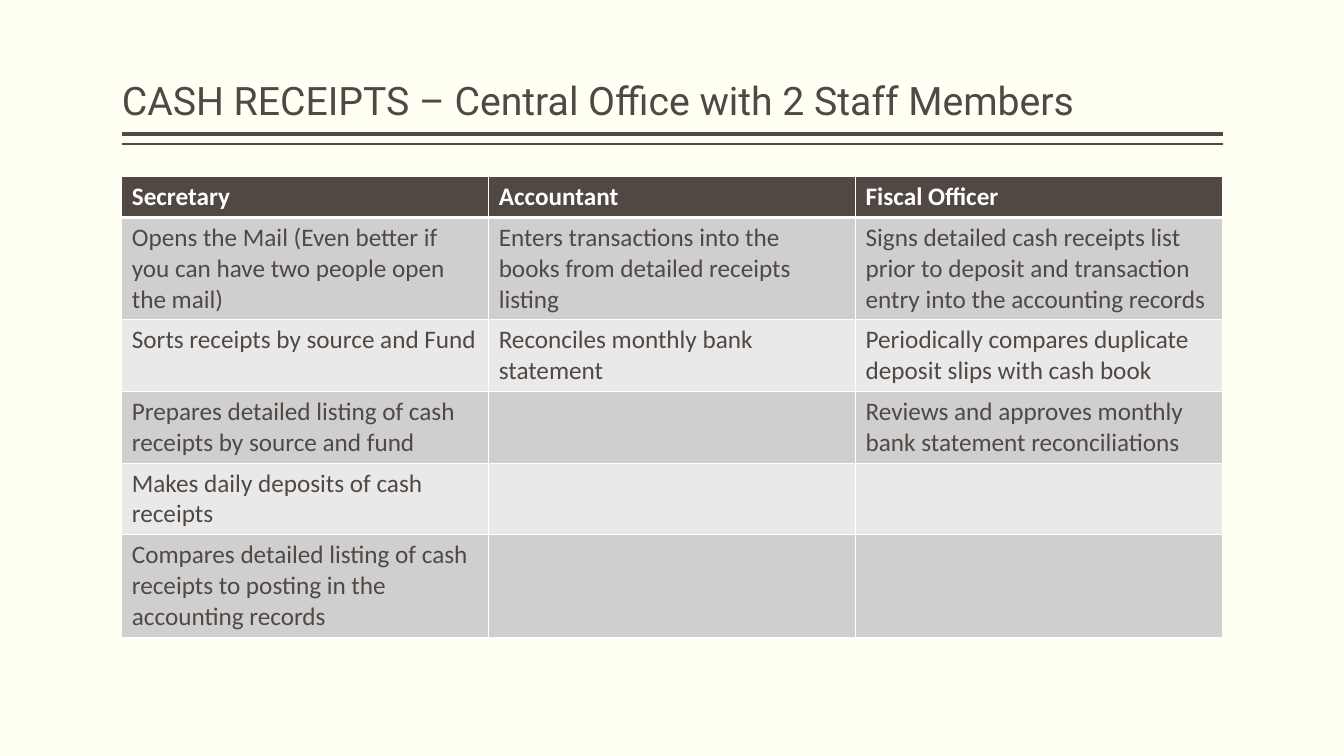
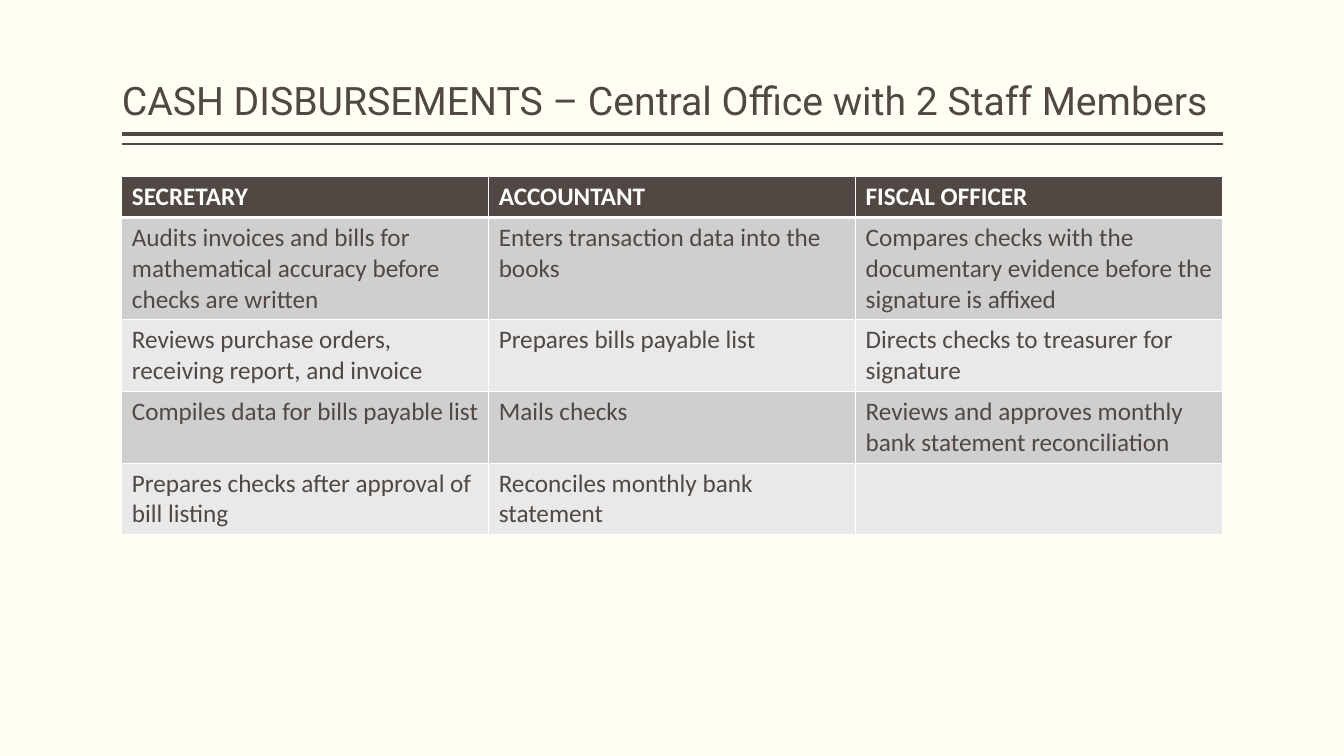
import lxml.etree
import pptx
import pptx.dml.color
import pptx.enum.shapes
import pptx.enum.text
import pptx.oxml
import pptx.oxml.ns
import pptx.util

Cm = pptx.util.Cm
Pt = pptx.util.Pt
RGBColor = pptx.dml.color.RGBColor

IVORY = RGBColor(0xFF, 0xFF, 0xF3)
BROWN = RGBColor(0x51, 0x48, 0x43)
WHITE = RGBColor(0xFF, 0xFF, 0xFF)
ROW_FILLS = (RGBColor(0xD0, 0xCF, 0xCF), RGBColor(0xE9, 0xE9, 0xE9))

LEFT, WIDTH = Cm(3.07), Cm(27.74)
TITLE_BOX = (LEFT, Cm(0.2), WIDTH, Cm(3.05))
TABLE_BOX = (LEFT, Cm(4.45), WIDTH)
ROW_HEIGHT = Cm(1.03)
RULES = ((Cm(3.38), Pt(3)), (Cm(3.63), Pt(1)))
TITLE_ONLY = 5

TITLE_FRAME = {
    "margin_left": 0,
    "margin_right": 0,
    "margin_top": Cm(0.13),
    "margin_bottom": Cm(0.13),
    "vertical_anchor": pptx.enum.text.MSO_ANCHOR.BOTTOM,
    "word_wrap": True,
    "auto_size": pptx.enum.text.MSO_AUTO_SIZE.NONE,
}
TITLE_PARAGRAPH = {"alignment": pptx.enum.text.PP_ALIGN.LEFT, "line_spacing": 0.9}
TITLE_FONT = {"name": "Roboto", "size": Pt(28), "bold": False}
HEADER_FONT = {"name": "Calibri", "size": Pt(18), "bold": True}
BODY_FONT = {"name": "Calibri", "size": Pt(18), "bold": False}

SLIDES = (
    (
        "CASH RECEIPTS – Central Office with 2 Staff Members",
        (
            ("Secretary", "Accountant", "Fiscal Officer"),
            (
                "Opens the Mail (Even better if you can have two people open the mail)",
                "Enters transactions into the books from detailed receipts listing",
                "Signs detailed cash receipts list prior to deposit and transaction "
                "entry into the accounting records",
            ),
            (
                "Sorts receipts by source and Fund",
                "Reconciles monthly bank statement",
                "Periodically compares duplicate deposit slips with cash book",
            ),
            (
                "Prepares detailed listing of cash receipts by source and fund",
                "",
                "Reviews and approves monthly bank statement reconciliations",
            ),
            ("Makes daily deposits of cash receipts", "", ""),
            (
                "Compares detailed listing of cash receipts to posting in the "
                "accounting records",
                "",
                "",
            ),
        ),
    ),
    (
        "CASH DISBURSEMENTS – Central Office with 2 Staff Members",
        (
            ("SECRETARY", "ACCOUNTANT", "FISCAL OFFICER"),
            (
                "Audits invoices and bills for mathematical accuracy before checks "
                "are written",
                "Enters transaction data into the books",
                "Compares checks with the documentary evidence before the signature "
                "is affixed",
            ),
            (
                "Reviews purchase orders, receiving report, and invoice",
                "Prepares bills payable list",
                "Directs checks to treasurer for signature",
            ),
            (
                "Compiles data for bills payable list",
                "Mails checks",
                "Reviews and approves monthly bank statement reconciliation",
            ),
            (
                "Prepares checks after approval of bill listing",
                "Reconciles monthly bank statement",
                "",
            ),
        ),
    ),
)


def apply_format(target, values):
    for name, value in values.items():
        setattr(target, name, value)


def write_text(paragraph, text, font, color):
    run = paragraph.add_run()
    run.text = text
    apply_format(run.font, font)
    run.font.color.rgb = color


def move_rules_to_master(slide, master, left, width):
    for number, (top, weight) in enumerate(RULES, start=1):
        rule = slide.shapes.add_connector(
            pptx.enum.shapes.MSO_CONNECTOR.STRAIGHT, left, top, left + width, top
        )
        rule.name = f"Title rule {number}"
        rule.line.color.rgb = BROWN
        rule.line.width = weight
        properties = rule.element.spPr
        lxml.etree.SubElement(properties, pptx.oxml.ns.qn("a:effectLst"))
        rule.element.nvCxnSpPr.cNvPr.set("id", str(20 + number))
        master.shapes.element.append(rule.element)


def add_title(slide, text, left, top, width, height):
    title = slide.shapes.title
    apply_format(title, {"left": left, "top": top, "width": width, "height": height})
    apply_format(title.text_frame, TITLE_FRAME)
    paragraph = title.text_frame.paragraphs[0]
    apply_format(paragraph, TITLE_PARAGRAPH)
    write_text(paragraph, text, TITLE_FONT, BROWN)


def set_borders(cell, top_weight, bottom_weight):
    weights = {"L": Pt(1), "R": Pt(1), "T": top_weight, "B": bottom_weight}
    properties = cell._tc.get_or_add_tcPr()
    for position, (side, weight) in enumerate(weights.items()):
        border = pptx.oxml.parse_xml(
            f'<a:ln{side} {pptx.oxml.ns.nsdecls("a")} w="{int(weight)}">'
            f'<a:solidFill><a:srgbClr val="{WHITE}"/></a:solidFill></a:ln{side}>'
        )
        properties.insert(position, border)


def add_duties_table(slide, rows, left, top, width):
    frame = slide.shapes.add_table(
        len(rows), len(rows[0]), left, top, width, ROW_HEIGHT * len(rows)
    )
    for row_index, row in enumerate(rows):
        is_header = row_index == 0
        fill = BROWN if is_header else ROW_FILLS[(row_index - 1) % 2]
        font = HEADER_FONT if is_header else BODY_FONT
        color = WHITE if is_header else BROWN
        for column_index, text in enumerate(row):
            cell = frame.table.cell(row_index, column_index)
            cell.fill.solid()
            cell.fill.fore_color.rgb = fill
            set_borders(
                cell,
                Pt(3) if row_index == 1 else Pt(1),
                Pt(3) if is_header else Pt(1),
            )
            if text:
                write_text(cell.text_frame.paragraphs[0], text, font, color)


def main():
    presentation = pptx.Presentation()
    presentation.slide_width = Cm(33.87)
    presentation.slide_height = Cm(19.05)
    master = presentation.slide_master
    master.background.fill.solid()
    master.background.fill.fore_color.rgb = IVORY
    for title, rows in SLIDES:
        slide = presentation.slides.add_slide(presentation.slide_layouts[TITLE_ONLY])
        add_title(slide, title, *TITLE_BOX)
        add_duties_table(slide, rows, *TABLE_BOX)
    move_rules_to_master(presentation.slides[0], master, LEFT, WIDTH)
    presentation.save("out.pptx")


if __name__ == "__main__":
    main()
